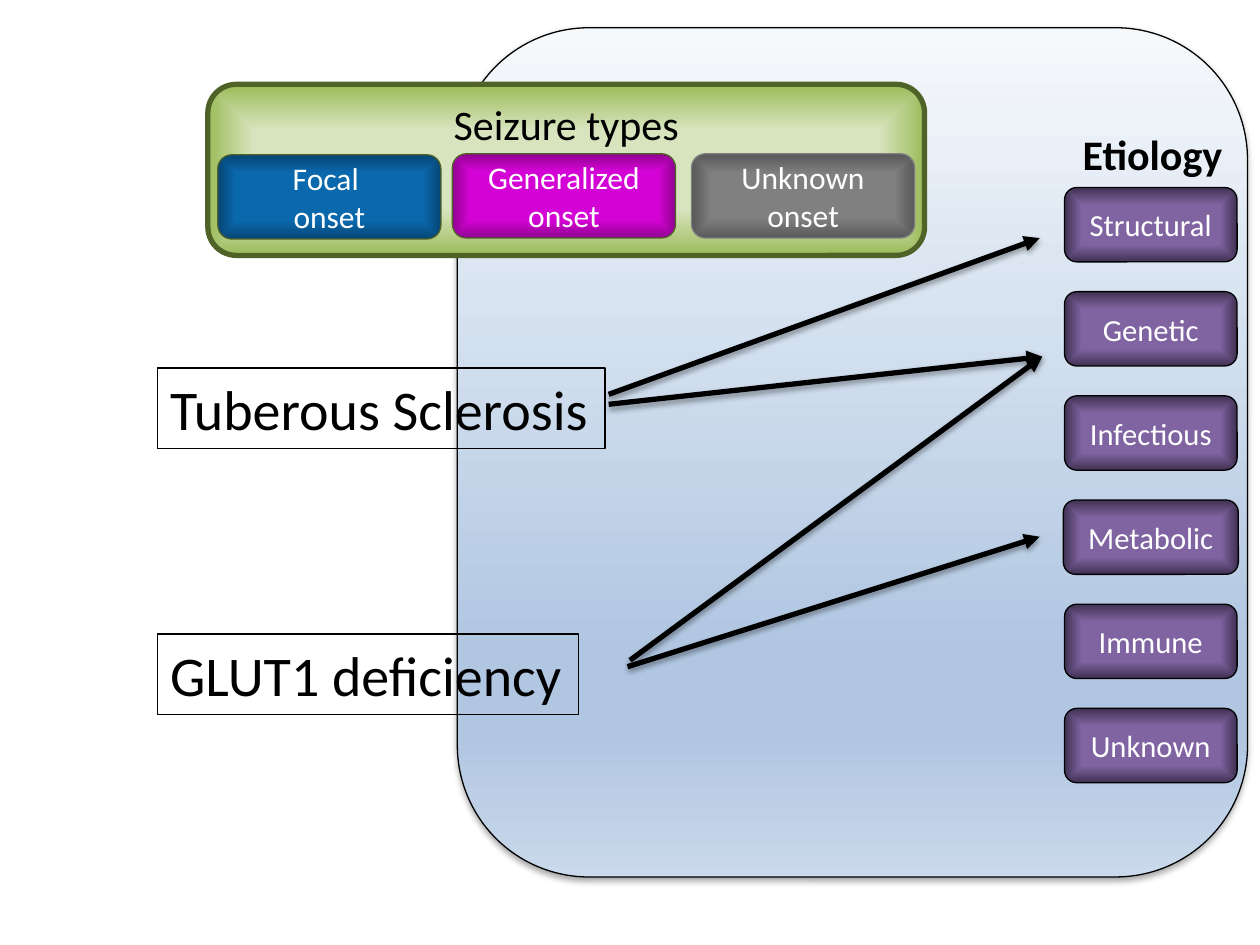
import lxml.etree
import pptx
import pptx.dml.color
import pptx.enum.shapes
import pptx.enum.text
import pptx.oxml
import pptx.oxml.ns
import pptx.util

Cm, Pt = pptx.util.Cm, pptx.util.Pt
KIND = pptx.enum.shapes.MSO_SHAPE
ALIGN = pptx.enum.text.PP_ALIGN
ANCHOR = pptx.enum.text.MSO_ANCHOR
FIT = pptx.enum.text.MSO_AUTO_SIZE
qn = pptx.oxml.ns.qn


def rgb(code):
    return pptx.dml.color.RGBColor.from_string(code)


def blend(shape, stops, path=None):
    """Fill with a gradient: top to bottom, or from the centre along a path."""
    marks = "".join(
        f'<a:gs pos="{pos * 1000}"><a:srgbClr val="{code}"/></a:gs>'
        for pos, code in stops)
    if path:
        way = (f'<a:path path="{path}"><a:fillToRect l="50000" t="50000" '
               'r="50000" b="50000"/></a:path>')
    else:
        way = '<a:lin ang="5400000" scaled="0"/>'
    props = shape._element.spPr
    props.insert(2, pptx.oxml.parse_xml(
        f'<a:gradFill {pptx.oxml.ns.nsdecls("a")} rotWithShape="1">'
        f'<a:gsLst>{marks}</a:gsLst>{way}</a:gradFill>'))


def shade(effects, alpha, drop):
    """Add a soft shadow that falls straight down."""
    outer = lxml.etree.SubElement(
        effects, qn("a:outerShdw"), blurRad="40000",
        dist=str(Pt(drop)), dir="5400000", rotWithShape="0")
    tint = lxml.etree.SubElement(outer, qn("a:srgbClr"), val="000000")
    lxml.etree.SubElement(tint, qn("a:alpha"), val=str(alpha * 1000))


class Board:
    font = "Calibri"
    ink = "000000"
    pale = "FFFFFF"

    def __init__(self, slide):
        self.slide = slide

    def letter(self, shape, text, size, color, align=ALIGN.CENTER, bold=False):
        """Set and format the text of a shape."""
        frame = shape.text_frame
        frame.text = text
        for par in frame.paragraphs:
            par.alignment = align
            for run in par.runs:
                run.font.name = self.font
                run.font.size = Pt(size)
                run.font.bold = bold
                run.font.color.rgb = rgb(color)

    def box(self, place, stops, path=None, edge=ink, width=0.75):
        shape = self.slide.shapes.add_shape(
            KIND.ROUNDED_RECTANGLE, *map(Cm, place))
        shape.shadow.inherit = False
        blend(shape, stops, path)
        shape.line.color.rgb = rgb(edge)
        shape.line.width = Pt(width)
        shape.text_frame.word_wrap = True
        return shape

    def tile(self, place, text, size, stops, path="shape", edge=ink):
        shape = self.box(place, stops, path, edge)
        shape.text_frame.vertical_anchor = ANCHOR.MIDDLE
        self.letter(shape, text, size, self.pale)

    def label(self, place, text):
        """Place a framed disease name."""
        shape = self.slide.shapes.add_textbox(*map(Cm, place))
        shape.line.color.rgb = rgb(self.ink)
        shape.line.width = Pt(0.75)
        shape.text_frame.word_wrap = False
        shape.text_frame.auto_size = FIT.SHAPE_TO_FIT_TEXT
        self.letter(shape, text, 32, self.ink, ALIGN.LEFT)

    def head(self, place, text):
        shape = self.slide.shapes.add_textbox(*map(Cm, place))
        shape.text_frame.word_wrap = True
        shape.text_frame.auto_size = FIT.SHAPE_TO_FIT_TEXT
        self.letter(shape, text, 24, self.ink, bold=True)

    def arrow(self, start, end):
        line = self.slide.shapes.add_connector(
            pptx.enum.shapes.MSO_CONNECTOR.STRAIGHT, *map(Cm, start + end))
        line.line.color.rgb = rgb(self.ink)
        line.line.width = Pt(3)
        props = line._element.spPr
        lxml.etree.SubElement(
            props.find(qn("a:ln")), qn("a:tailEnd"), type="triangle")
        shade(lxml.etree.SubElement(props, qn("a:effectLst")), 38, 1.6)


def main():
    deck = pptx.Presentation()
    deck.slide_width, deck.slide_height = Cm(25.4), Cm(19.05)
    board = Board(deck.slides.add_slide(deck.slide_layouts[6]))

    panel = board.box(
        (9.22, 0.56, 15.93, 17.12),
        [(0, "F6F9FC"), (74, "B0C6E1"), (83, "B0C6E1"), (100, "CAD9EB")])
    shade(panel._element.spPr.find(qn("a:effectLst")), 35, 1.8)
    board.head((20.96, 2.46, 4.55, 1.27), "Etiology")

    board.label((3.18, 7.42, 9.02, 1.63), "Tuberous Sclerosis")
    board.label((3.18, 12.78, 8.48, 1.63), "GLUT1 deficiency")
    genetic = (21.01, 7.19)
    for start, end in [((12.27, 7.95), (20.96, 4.8)),
                       ((12.27, 8.15), genetic),
                       ((12.7, 13.31), genetic),
                       ((12.65, 13.44), (20.96, 10.82))]:
        board.arrow(start, end)

    causes = ["Structural", "Genetic", "Infectious",
              "Metabolic", "Immune", "Unknown"]
    for row, cause in enumerate(causes):
        wide = 3.53 if cause == "Metabolic" else 3.48
        board.tile((23.2 - wide / 2, 3.78 + 2.1 * row, wide, 1.5), cause,
                   17.5, [(53, "8064A2"), (100, "403152")])

    green = "4F6228"
    types = board.box((4.19, 1.7, 14.45, 3.45),
                      [(47, "D7E4BD"), (100, "9BBB59")], "shape", green, 3)
    types.text_frame.vertical_anchor = ANCHOR.TOP
    board.letter(types, "Seizure types", 24, board.ink)
    for left, top, text, stops, path, edge in [
            (9.12, 3.1, "Generalized onset",
             [(58, "D403D5"), (100, "8F038F")], "shape", green),
            (13.94, 3.1, "Unknown onset",
             [(51, "808080"), (100, "595959")], "rect", "808080"),
            (4.39, 3.12, "Focal \nonset",
             [(57, "0A68AD"), (100, "064573")], "shape", green)]:
        board.tile((left, top, 4.5, 1.7), text, 18, stops, path, edge)

    deck.save("out.pptx")


if __name__ == "__main__":
    main()
